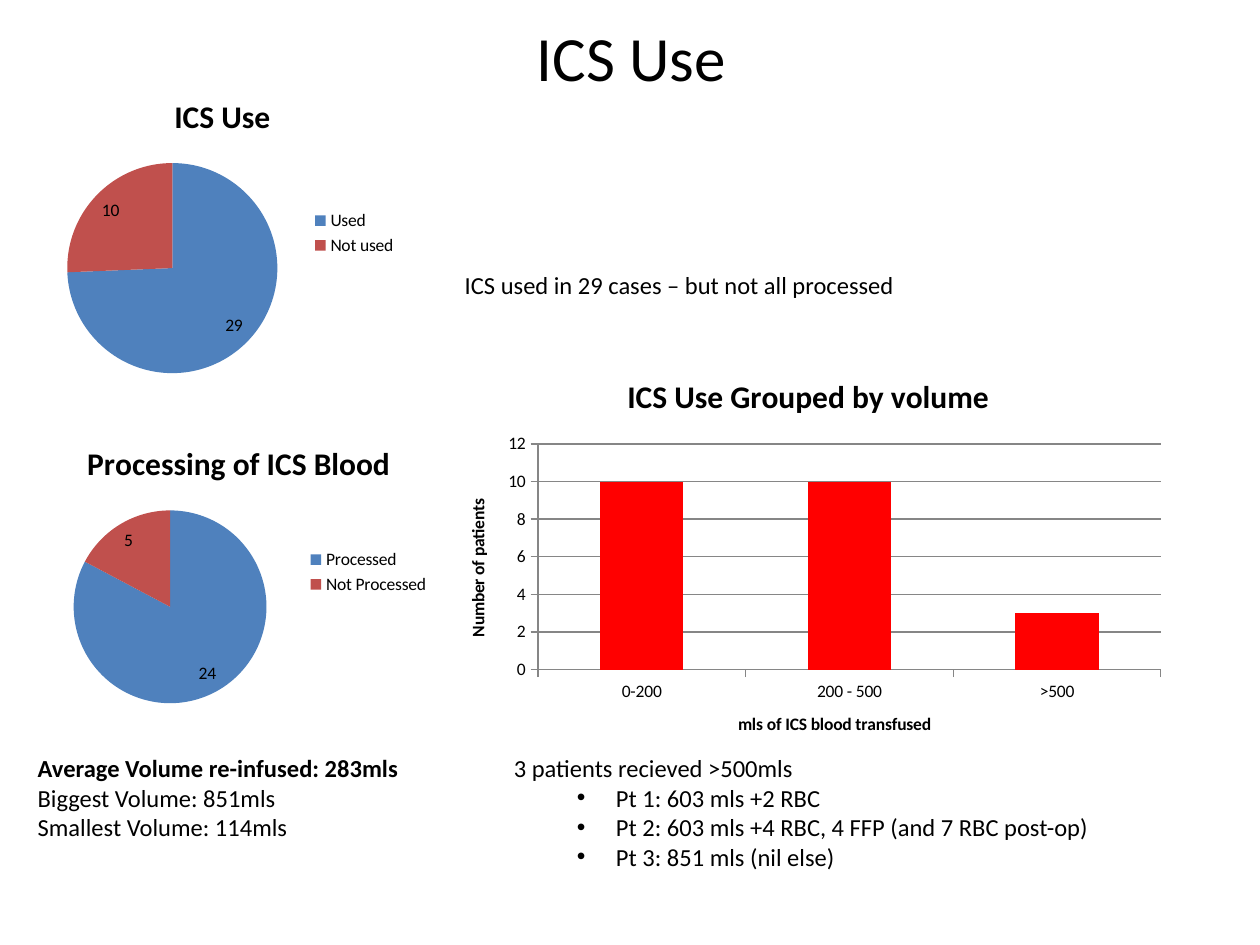
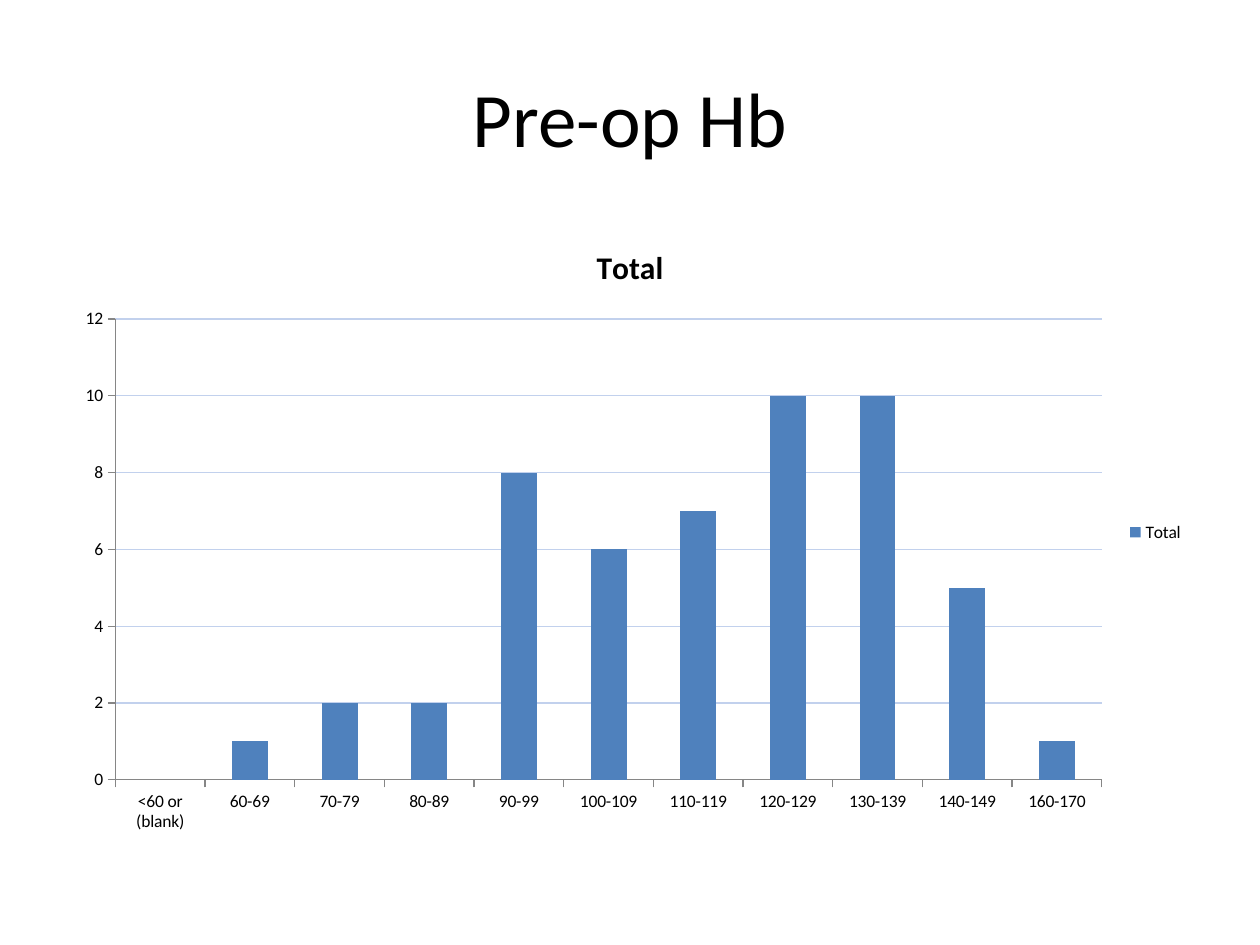
from pptx import Presentation
from pptx.chart.data import CategoryChartData
from pptx.dml.color import RGBColor
from pptx.enum.chart import XL_CHART_TYPE, XL_LABEL_POSITION, XL_LEGEND_POSITION, XL_TICK_MARK
from pptx.enum.text import MSO_ANCHOR, PP_ALIGN
from pptx.oxml.ns import qn
from pptx.util import Inches, Pt
from lxml.etree import SubElement

COLORS = {"text": "000000", "blue": "4F81BD", "brick": "C0504D",
          "red": "FF0000", "axis": "868686", "pale_grid": "C2D1ED"}
FONT = "Calibri"


def add_text(slide, lines, box, size=14, align=PP_ALIGN.LEFT, anchor=MSO_ANCHOR.TOP,
             bold_first=False, bullets_from=None):
    """Add a text box; lines from index bullets_from onward become bullets."""
    frame = slide.shapes.add_textbox(*map(Inches, box)).text_frame
    frame.word_wrap = True
    frame.vertical_anchor = anchor
    for i, line in enumerate(lines):
        paragraph = frame.paragraphs[0] if i == 0 else frame.add_paragraph()
        paragraph.alignment = align
        run = paragraph.add_run()
        run.text = line
        run.font.name = FONT
        run.font.size = Pt(size)
        run.font.bold = bold_first and i == 0
        run.font.color.rgb = RGBColor.from_string(COLORS["text"])
        if bullets_from is not None and i >= bullets_from:
            paragraph.level = 1
            props = paragraph._p.get_or_add_pPr()
            props.set("marL", str(Inches(0.81)))
            props.set("indent", str(Inches(-0.31)))
            SubElement(props, qn("a:buFont"), typeface="Arial")
            SubElement(props, qn("a:buChar"), char="•")


def add_titled_chart(slide, kind, title, series_name, values, box, legend=True):
    data = CategoryChartData()
    data.categories = list(values)
    data.add_series(series_name, list(values.values()))
    chart = slide.shapes.add_chart(kind, *map(Inches, box), data).chart
    chart.font.name = FONT
    chart.font.size = Pt(10)
    chart.font.color.rgb = RGBColor.from_string(COLORS["text"])
    chart.has_title = True
    chart.chart_title.include_in_layout = False
    heading = chart.chart_title.text_frame
    heading.text = title
    heading_font = heading.paragraphs[0].runs[0].font
    heading_font.name = FONT
    heading_font.size = Pt(18)
    heading_font.bold = True
    heading_font.color.rgb = RGBColor.from_string(COLORS["text"])
    chart.has_legend = legend
    if legend:
        chart.legend.position = XL_LEGEND_POSITION.RIGHT
        chart.legend.include_in_layout = False
    return chart


prs = Presentation()
prs.slide_width = Inches(10)
prs.slide_height = Inches(7.5)
use_slide, hb_slide = [prs.slides.add_slide(prs.slide_layouts[6]) for _ in range(2)]

for slide, title, box, size in [
    (use_slide, "ICS Use", (0.51, 0.05, 9, 0.79), 36),
    (hb_slide, "Pre-op Hb", (0.5, 0.3, 9, 1.25), 44),
]:
    add_text(slide, [title], box, size=size, align=PP_ALIGN.CENTER, anchor=MSO_ANCHOR.MIDDLE)

# Pies: how often ICS was used, and how often its blood was processed
for title, counts, box in [
    ("Processing of ICS Blood", {"Processed": 24, "Not Processed": 5}, (0.28, 3.36, 3.23, 2.36)),
    ("ICS Use", {"Used": 29, "Not used": 10}, (0.28, 0.6, 2.97, 2.5)),
]:
    pie = add_titled_chart(use_slide, XL_CHART_TYPE.PIE, title, "Series 1", counts, box)
    plot = pie.plots[0]
    plot.vary_by_categories = True
    for i, color in enumerate(("blue", "brick")):
        fill = plot.series[0].points[i].format.fill
        fill.solid()
        fill.fore_color.rgb = RGBColor.from_string(COLORS[color])
    plot.has_data_labels = True
    plot.data_labels.show_value = True
    plot.data_labels.position = XL_LABEL_POSITION.INSIDE_END

# Columns: transfused volume groups, and haemoglobin before the operation
volume_groups = {"0-200": 10, "200 - 500": 10, ">500": 3}
hb_groups = {"<60 or (blank)": None, "60-69": 1, "70-79": 2, "80-89": 2, "90-99": 8,
             "100-109": 6, "110-119": 7, "120-129": 10, "130-139": 10, "140-149": 5,
             "160-170": 1}
volume_chart = add_titled_chart(use_slide, XL_CHART_TYPE.COLUMN_CLUSTERED,
                                "ICS Use Grouped by volume", "Series 1", volume_groups,
                                (3.5, 2.81, 5.83, 3.23), legend=False)
hb_chart = add_titled_chart(hb_slide, XL_CHART_TYPE.COLUMN_CLUSTERED, "Total", "Total",
                            hb_groups, (0.5, 1.75, 9, 4.95))

for chart, bar_color, grid_color in [(volume_chart, "red", "axis"),
                                     (hb_chart, "blue", "pale_grid")]:
    plot = chart.plots[0]
    plot.gap_width = 150
    plot.vary_by_categories = False
    fill = plot.series[0].format.fill
    fill.solid()
    fill.fore_color.rgb = RGBColor.from_string(COLORS[bar_color])
    for axis in (chart.category_axis, chart.value_axis):
        axis.major_tick_mark = XL_TICK_MARK.OUTSIDE
        axis.minor_tick_mark = XL_TICK_MARK.NONE
        axis.format.line.color.rgb = RGBColor.from_string(COLORS["axis"])
        axis.format.line.width = Pt(0.75)
    chart.value_axis.minimum_scale = 0
    chart.value_axis.maximum_scale = 12
    chart.value_axis.major_unit = 2
    grid = chart.value_axis.major_gridlines.format.line
    grid.color.rgb = RGBColor.from_string(COLORS[grid_color])
    grid.width = Pt(0.75)

for axis, caption, rotation in [
    (volume_chart.category_axis, "mls of ICS blood transfused", 0),
    (volume_chart.value_axis, "Number of patients", -90),
]:
    frame = axis.axis_title.text_frame
    frame.text = caption
    font = frame.paragraphs[0].runs[0].font
    font.name = FONT
    font.size = Pt(10)
    font.bold = True
    font.color.rgb = RGBColor.from_string(COLORS["text"])
    frame._txBody.find(qn("a:bodyPr")).set("rot", str(rotation * 60000))

add_text(use_slide, ["Average Volume re-infused: 283mls", "Biggest Volume: 851mls",
                     "Smallest Volume: 114mls"], (0.2, 5.93, 3.39, 0.81), bold_first=True)
add_text(use_slide, ["3 patients recieved >500mls", "Pt 1: 603 mls +2 RBC",
                     "Pt 2: 603 mls +4 RBC, 4 FFP (and 7 RBC post-op)",
                     "Pt 3: 851 mls (nil else)"], (3.98, 5.93, 5.91, 1.04), bullets_from=1)
add_text(use_slide, ["ICS used in 29 cases – but not all processed"], (3.59, 2.09, 5.43, 0.34))

prs.save("out.pptx")
